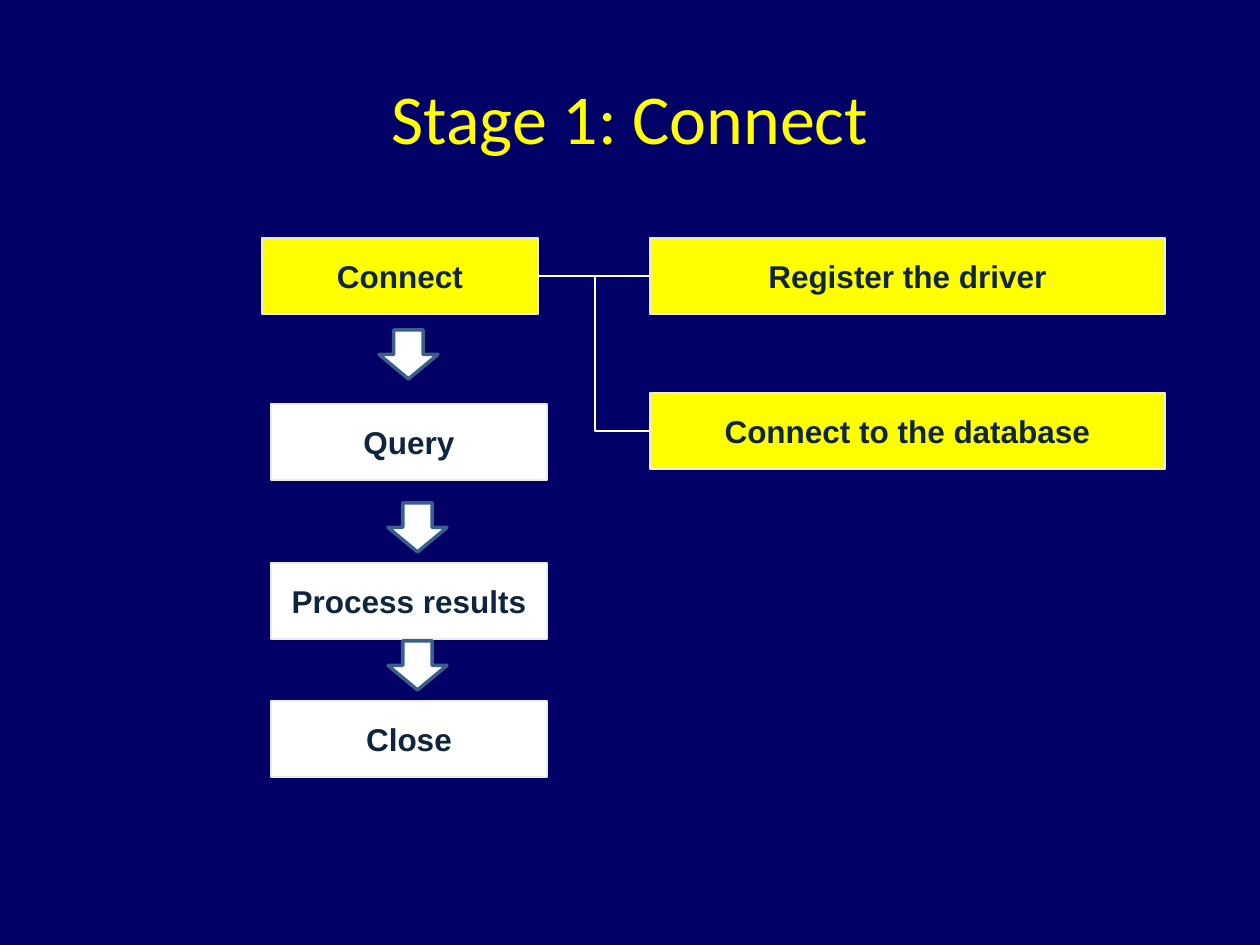
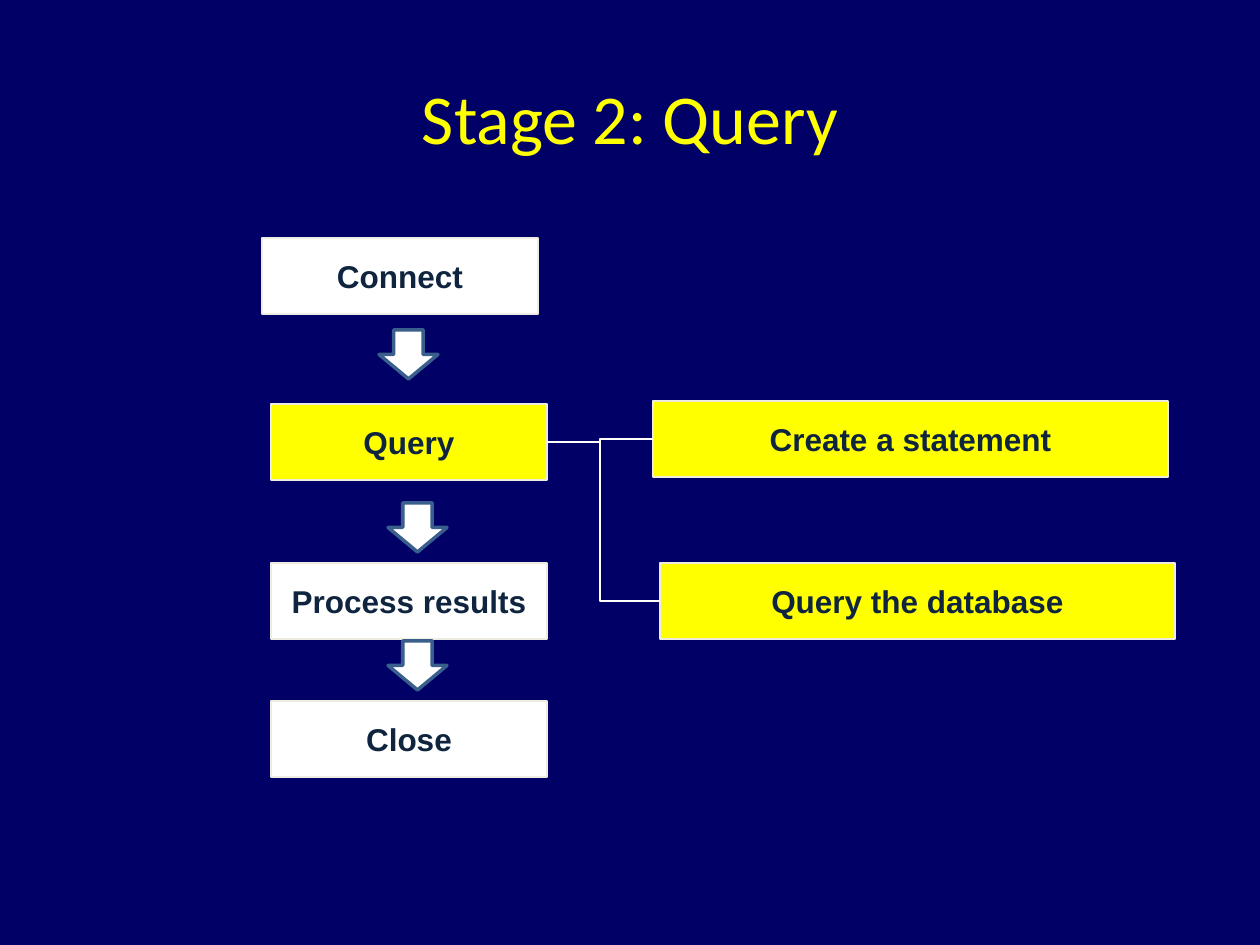
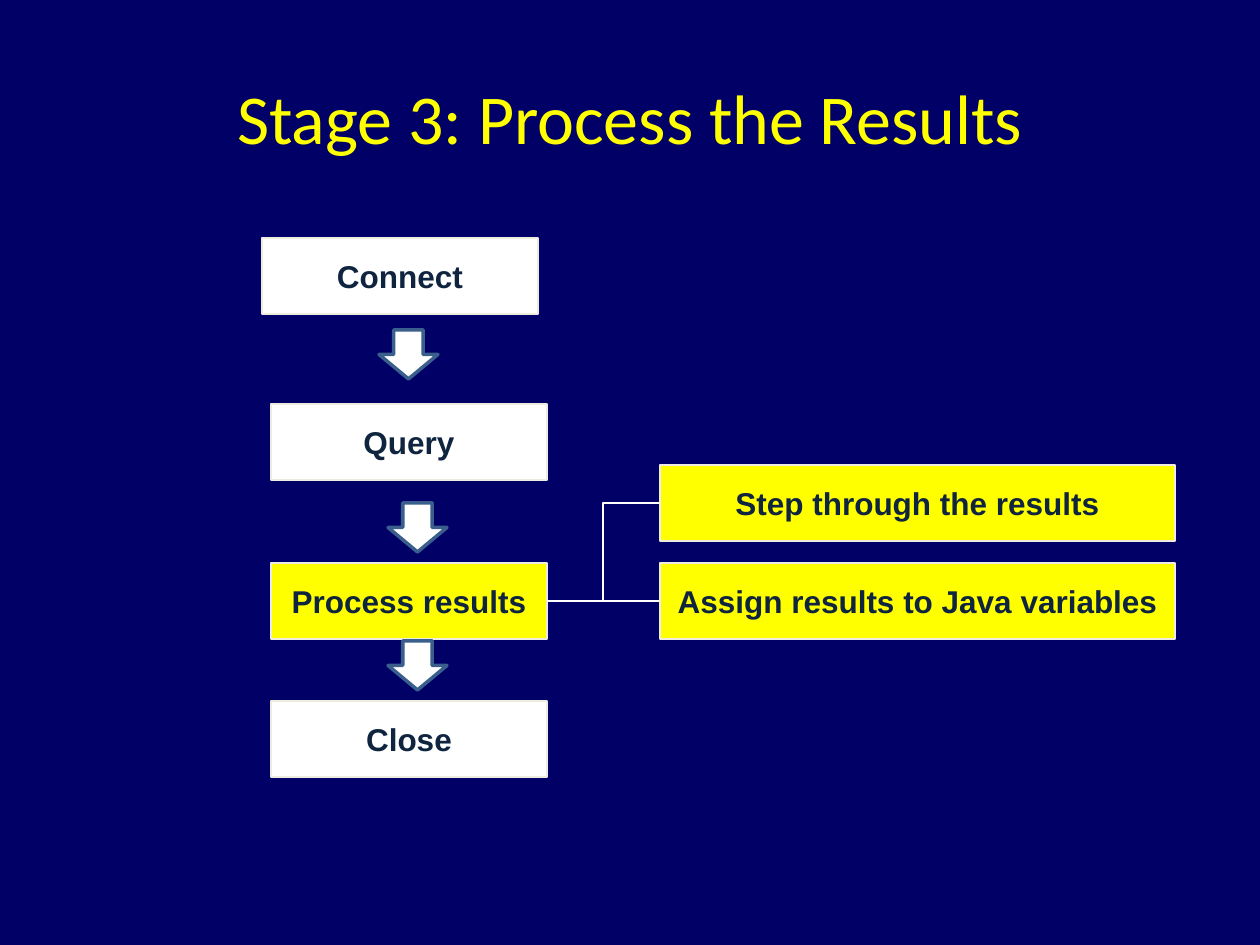
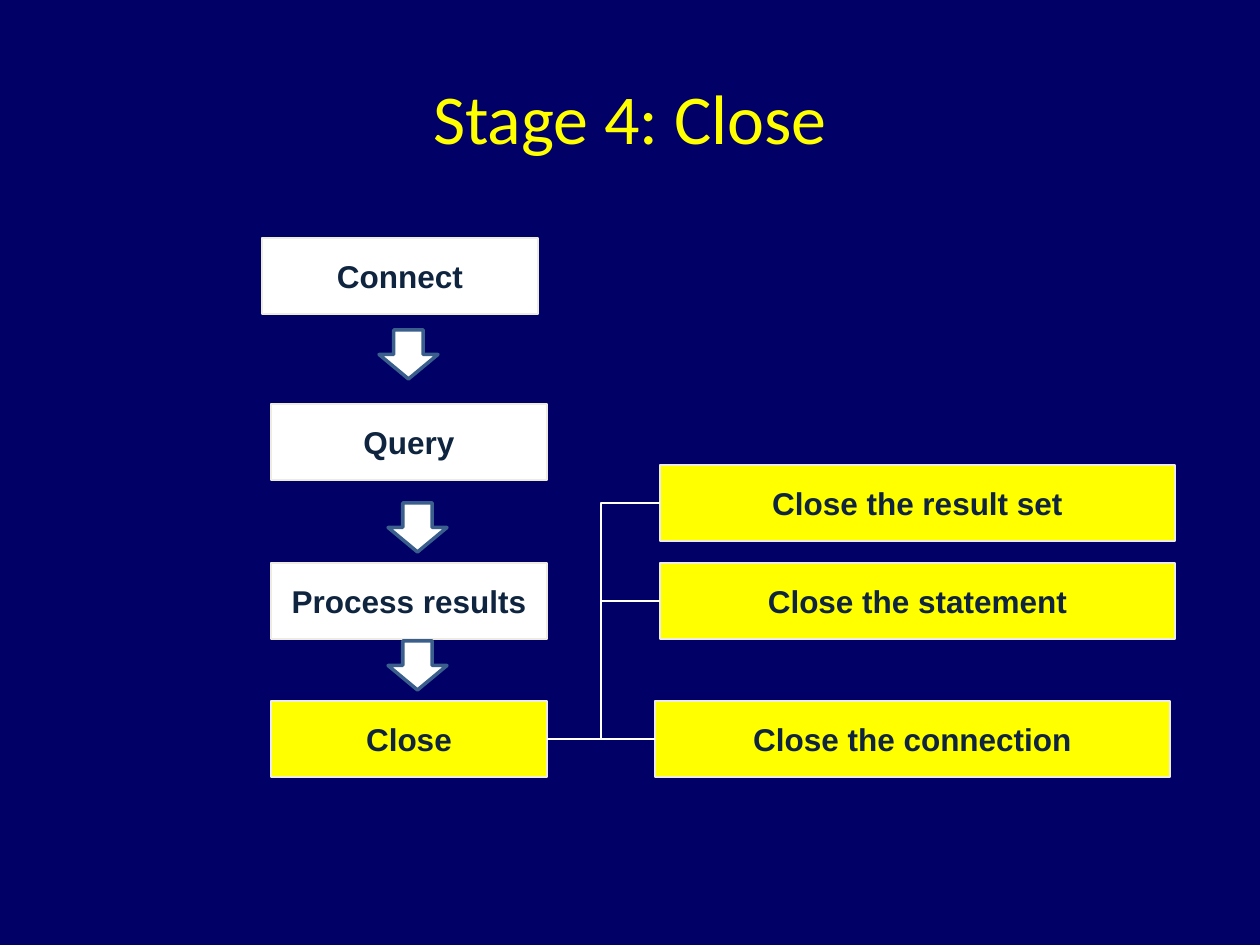
import pptx
import pptx.dml.color
import pptx.enum.shapes
import pptx.enum.text
import pptx.oxml.ns
import pptx.util
from lxml import etree

PX = 914400 / 126
COLORS = {
    "background": "000066",
    "highlight": "FFFF00",
    "plain": "FFFFFF",
    "box_line": "EEECE1",
    "arrow_line": "3A5F8C",
    "box_text": "0F243E",
}
SHAPES = pptx.enum.shapes.MSO_SHAPE
CONNECTORS = pptx.enum.shapes.MSO_CONNECTOR
BOX_HEIGHT = 76
STEP_WIDTH = 276
DETAIL_WIDTH = 515
STEPS = [("Connect", 262, 238), ("Query", 271, 404), ("Process results", 271, 563), ("Close", 271, 701)]
ARROWS = [(379, 330), (388, 503), (388, 641)]
STAGES = [
    {
        "title": "Stage 1: Connect",
        "trunk": 595,
        "details": [
            ("Connect to the database", 650, 393, "branch"),
            ("Register the driver", 650, 238, "elbow"),
        ],
    },
    {
        "title": "Stage 2: Query",
        "trunk": 600,
        "details": [
            ("Query the database", 660, 563, "branch"),
            ("Create a statement", 653, 401, "elbow"),
        ],
    },
    {
        "title": "Stage 3: Process the Results",
        "trunk": 603,
        "details": [
            ("Assign results to Java variables", 660, 563, "straight"),
            ("Step through the results", 660, 465, "branch"),
        ],
    },
    {
        "title": "Stage 4: Close",
        "trunk": 601,
        "details": [
            ("Close the statement", 660, 563, "twig"),
            ("Close the result set", 660, 465, "branch"),
            ("Close the connection", 655, 701, "straight"),
        ],
    },
]


def add_filled_shape(slide, kind, bounds, fill, line, line_width):
    shape = slide.shapes.add_shape(kind, *[round(value * PX) for value in bounds])
    shape.shadow.inherit = False
    shape.fill.solid()
    shape.fill.fore_color.rgb = pptx.dml.color.RGBColor.from_string(COLORS[fill])
    shape.line.color.rgb = pptx.dml.color.RGBColor.from_string(COLORS[line])
    shape.line.width = pptx.util.Pt(line_width)
    return shape


def write_centered(shape, text, font_name, size, color, bold):
    frame = shape.text_frame
    frame.vertical_anchor = pptx.enum.text.MSO_ANCHOR.MIDDLE
    paragraph = frame.paragraphs[0]
    paragraph.alignment = pptx.enum.text.PP_ALIGN.CENTER
    run = paragraph.add_run()
    run.text = text
    run.font.name = font_name
    run.font.size = pptx.util.Pt(size)
    run.font.bold = bold
    run.font.color.rgb = pptx.dml.color.RGBColor.from_string(COLORS[color])


presentation = pptx.Presentation()
presentation.slide_width = pptx.util.Inches(10)
presentation.slide_height = pptx.util.Inches(7.5)
background = presentation.slide_master.background.fill
background.solid()
background.fore_color.rgb = pptx.dml.color.RGBColor.from_string(COLORS["background"])

for stage_index, stage in enumerate(STAGES):
    slide = presentation.slides.add_slide(presentation.slide_layouts[6])
    title = slide.shapes.add_textbox(*[round(value * PX) for value in (63, 38, 1134, 158)])
    title.text_frame.word_wrap = True
    write_centered(title, stage["title"], "Calibri", 40, "highlight", False)

    step_boxes = []
    for step_index, (text, left, top) in enumerate(STEPS):
        fill = "highlight" if step_index == stage_index else "plain"
        box = add_filled_shape(slide, SHAPES.RECTANGLE, (left, top, STEP_WIDTH, BOX_HEIGHT), fill, "box_line", 1)
        box.text_frame.word_wrap = False
        write_centered(box, text, "Arial", 18, "box_text", True)
        step_boxes.append(box)

    for left, top in ARROWS:
        add_filled_shape(slide, SHAPES.DOWN_ARROW, (left, top, 59, 49), "plain", "arrow_line", 2)

    active_box = step_boxes[stage_index]
    active_middle = active_box.top + active_box.height // 2
    trunk = round(stage["trunk"] * PX)
    for text, left, top, link in stage["details"]:
        box = add_filled_shape(slide, SHAPES.RECTANGLE, (left, top, DETAIL_WIDTH, BOX_HEIGHT), "highlight", "box_line", 1)
        box.text_frame.word_wrap = False
        write_centered(box, text, "Arial", 18, "box_text", True)

        middle = box.top + box.height // 2
        kind = CONNECTORS.ELBOW if link in ("elbow", "branch") else CONNECTORS.STRAIGHT
        end_y = active_middle if link == "branch" else middle
        connector = slide.shapes.add_connector(kind, box.left, middle, trunk, end_y)
        if link == "branch":
            geometry = connector._element.spPr.find(pptx.oxml.ns.qn("a:prstGeom"))
            geometry.set("prst", "bentConnector2")
        else:
            connector.begin_connect(box, 1)
            if link != "twig":
                connector.end_connect(active_box, 3)
        connector.line.color.rgb = pptx.dml.color.RGBColor.from_string(COLORS["plain"])
        connector.line.width = pptx.util.Pt(0.75)
        etree.SubElement(connector._element.spPr, pptx.oxml.ns.qn("a:effectLst"))

presentation.save("out.pptx")
